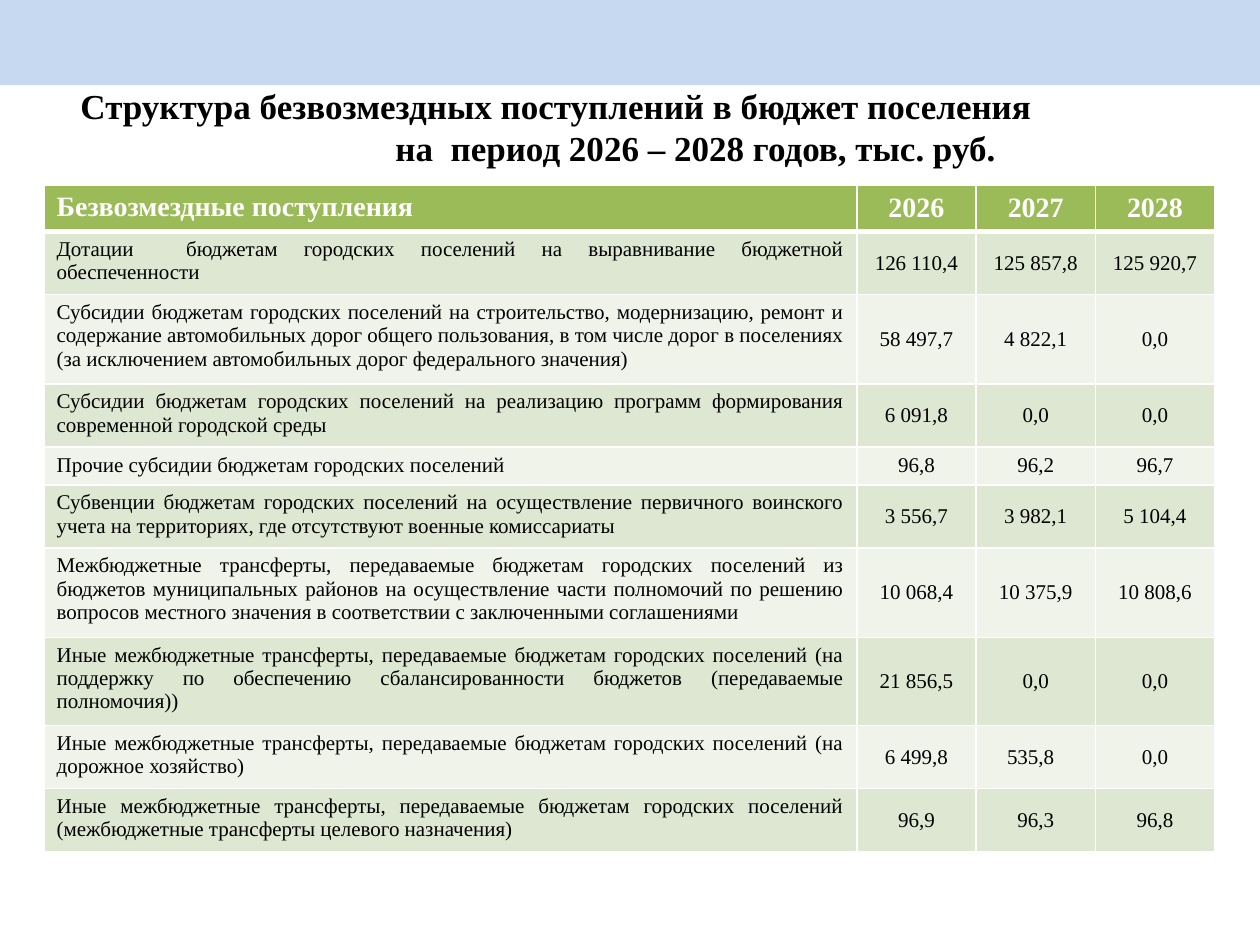
from lxml.etree import SubElement as Sub
from pptx import Presentation
from pptx.dml.color import RGBColor
from pptx.enum.shapes import MSO_SHAPE as Shape
from pptx.enum.text import MSO_ANCHOR as Anchor, PP_ALIGN as Align
from pptx.oxml.ns import qn
from pptx.util import Inches, Pt

SKY = RGBColor(0xC6, 0xD9, 0xF1)
GREEN = RGBColor(0x9B, 0xBB, 0x59)
SAGE = RGBColor(0xDE, 0xE7, 0xD1)
PALE = RGBColor(0xEF, 0xF3, 0xEA)
WHITE = RGBColor(0xFF, 0xFF, 0xFF)
BLACK = RGBColor(0, 0, 0)


def write(para, text, size=12, color=BLACK, bold=False, align=Align.LEFT):
    para.alignment = align
    run = para.add_run()
    run.text = text
    font = run.font
    font.name = "Times New Roman"
    font.size = Pt(size)
    font.bold = bold
    font.color.rgb = color


def edge(cell, side, width):
    line = Sub(cell._tc.get_or_add_tcPr(), qn(f"a:ln{side}"), w=str(Pt(width)))
    fill = Sub(line, qn("a:solidFill"))
    Sub(fill, qn("a:srgbClr"), val=str(WHITE))


deck = Presentation()
deck.slide_width = Inches(10)
deck.slide_height = Inches(7.5)
slide = deck.slides.add_slide(deck.slide_layouts[6])
wide, high = deck.slide_width, deck.slide_height

band = slide.shapes.add_shape(Shape.RECTANGLE, 0, 0, wide, int(high * 0.09))
band.shadow.inherit = False
band.fill.solid()
band.fill.fore_color.rgb = SKY
band.line.fill.background()

title = slide.shapes.add_textbox(Inches(0.54), Inches(0.62), Inches(9.1), Inches(0.8))
frame = title.text_frame
frame.word_wrap = True
write(frame.paragraphs[0], "Структура безвозмездных поступлений в бюджет поселения",
      size=20, bold=True)
last = frame.add_paragraph()
write(last, "на  период 2026 – 2028 годов, тыс. руб.", size=20, bold=True)
last._p.get_or_add_pPr().set("marL", str(Inches(2.5)))

rows = [
    (0.36, "Безвозмездные поступления", "2026", "2027", "2028"),
    (0.49, "Дотации  бюджетам городских поселений на выравнивание бюджетной обеспеченности",
     "126 110,4", "125 857,8", "125 920,7"),
    (0.71, "Субсидии бюджетам городских поселений на строительство, модернизацию, ремонт и "
     "содержание автомобильных дорог общего пользования, в том числе дорог в поселениях "
     "(за исключением автомобильных дорог федерального значения)",
     "58 497,7", "4 822,1", "0,0"),
    (0.49, "Субсидии бюджетам городских поселений на реализацию программ формирования "
     "современной городской среды", "6 091,8", "0,0", "0,0"),
    (0.3, "Прочие субсидии бюджетам городских поселений", "96,8", "96,2", "96,7"),
    (0.47, "Субвенции бюджетам городских поселений на осуществление первичного воинского "
     "учета на территориях, где отсутствуют военные комиссариаты",
     "3 556,7", "3 982,1", "5 104,4"),
    (0.71, "Межбюджетные трансферты, передаваемые бюджетам городских поселений из "
     "бюджетов муниципальных районов на осуществление части полномочий по решению "
     "вопросов местного значения в соответствии с заключенными соглашениями",
     "10 068,4", "10 375,9", "10 808,6"),
    (0.69, "Иные межбюджетные трансферты, передаваемые бюджетам городских поселений (на "
     "поддержку по обеспечению сбалансированности бюджетов (передаваемые полномочия))",
     "21 856,5", "0,0", "0,0"),
    (0.49, "Иные межбюджетные трансферты, передаваемые бюджетам городских поселений (на "
     "дорожное хозяйство)", "6 499,8", "535,8", "0,0"),
    (0.49, "Иные межбюджетные трансферты, передаваемые бюджетам городских поселений "
     "(межбюджетные трансферты целевого назначения)", "96,9", "96,3", "96,8"),
]

span, first = 9.29, 6.45
total = sum(row[0] for row in rows)
table = slide.shapes.add_table(len(rows), 4, Inches(0.35), Inches(1.47),
                               Inches(span), Inches(total)).table
for c, col in enumerate(table.columns):
    col.width = Inches(first if c == 0 else (span - first) / 3)

for r, (tall, *texts) in enumerate(rows):
    table.rows[r].height = Inches(tall)
    head = r == 0
    for c, text in enumerate(texts):
        cell = table.cell(r, c)
        for side in "LRTB":
            thick = (head and side == "B") or (r == 1 and side == "T")
            edge(cell, side, 3 if thick else 1)
        cell.fill.solid()
        cell.fill.fore_color.rgb = GREEN if head else SAGE if r % 2 else PALE
        cell.vertical_anchor = Anchor.MIDDLE if c else Anchor.TOP
        if text == "535,8":
            cell.margin_right = Inches(0.18)
        align = Align.CENTER if c else Align.LEFT if head else Align.JUSTIFY
        write(cell.text_frame.paragraphs[0], text, size=16 if head else 12,
              color=WHITE if head else BLACK, bold=head, align=align)

deck.save("out.pptx")
